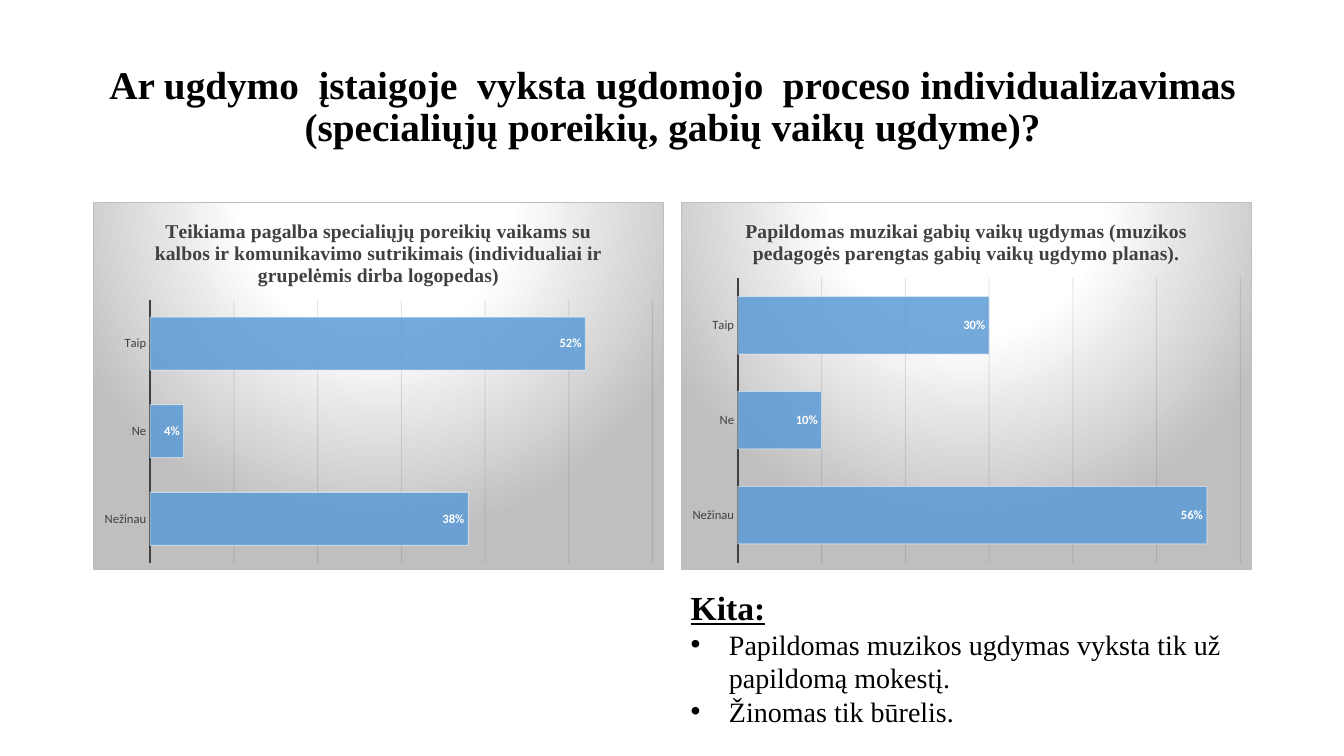
from dataclasses import dataclass

from lxml import etree
from pptx import Presentation
from pptx.chart.data import CategoryChartData
from pptx.dml.color import RGBColor
from pptx.enum.chart import XL_CHART_TYPE as ChartType
from pptx.enum.chart import XL_LABEL_POSITION as LabelPosition
from pptx.enum.chart import XL_TICK_MARK as TickMark
from pptx.enum.text import MSO_ANCHOR as Anchor
from pptx.enum.text import MSO_AUTO_SIZE as AutoSize
from pptx.enum.text import PP_ALIGN as Align
from pptx.oxml import parse_xml
from pptx.oxml.ns import nsdecls, qn
from pptx.util import Inches, Pt


@dataclass(frozen=True)
class Theme:
    text_font: str = "Times New Roman"
    chart_font: str = "Calibri"
    black: str = "000000"
    white: str = "FFFFFF"
    dark: str = "404040"
    grid: str = "0D0D0D"
    grey: str = "BFBFBF"
    bar: str = "5B9BD5"
    title_size: int = 28
    heading_size: int = 24
    list_size: int = 20
    chart_title_size: int = 14
    chart_size: int = 10
    label_size: int = 9


THEME = Theme()

# Two-column grid, in inches
SLIDE_WIDTH, SLIDE_HEIGHT = 13.33, 7.5
MARGIN, GAP = 0.92, 0.16
FULL_WIDTH = 11.5
COLUMN_WIDTH = (FULL_WIDTH - GAP) / 2
TITLE_ROW = (0.4, 1.34)
CHART_ROW = (2, 3.66)
LIST_ROW = (5.77, 1.82)

TITLE = ("Ar ugdymo  įstaigoje  vyksta ugdomojo  proceso individualizavimas "
         "(specialiųjų poreikių, gabių vaikų ugdyme)?")
ANSWERS = ("Nežinau", "Ne", "Taip")
CHARTS = (
    ("Teikiama pagalba specialiųjų poreikių vaikams su kalbos ir komunikavimo "
     "sutrikimais (individualiai ir grupelėmis dirba logopedas)", (0.38, 0.04, 0.52)),
    ("Papildomas muzikai gabių vaikų ugdymas (muzikos pedagogės parengtas "
     "gabių vaikų ugdymo planas).", (0.56, 0.1, 0.3)),
)
HEADING = "Kita:"
REMARKS = ("Papildomas muzikos ugdymas vyksta tik už papildomą mokestį.",
           "Žinomas tik būrelis.")


def cell(column, row, width=COLUMN_WIDTH):
    """Left, top, width and height of a grid cell."""
    left = MARGIN + column * (COLUMN_WIDTH + GAP)
    return [Inches(value) for value in (left, row[0], width, row[1])]


def place(shape, box):
    shape.left, shape.top, shape.width, shape.height = box


def style_font(font, name, size, color, bold=False):
    font.name, font.size, font.bold = name, Pt(size), bold
    font.color.rgb = RGBColor.from_string(color)


def style_line(line, color, width):
    line.color.rgb = RGBColor.from_string(color)
    line.width = Pt(width)


def set_alpha(chart, route, percent):
    for color in chart.element.xpath(route + "/a:solidFill/a:srgbClr"):
        etree.SubElement(color, qn("a:alpha")).set("val", str(percent * 1000))


def set_chart_background(chart):
    stops = "".join(
        f'<a:gs pos="{position * 1000}"><a:srgbClr val="{color}"/></a:gs>'
        for position, color in ((0, THEME.white), (39, THEME.white), (100, THEME.grey)))
    background = parse_xml(
        f'<c:spPr {nsdecls("c", "a")}><a:gradFill><a:gsLst>{stops}</a:gsLst>'
        '<a:path path="circle"><a:fillToRect l="50000" t="-80000" r="50000" b="180000"/>'
        f'</a:path></a:gradFill><a:ln w="{Pt(0.75)}"><a:solidFill>'
        f'<a:srgbClr val="{THEME.grey}"/></a:solidFill></a:ln></c:spPr>')
    chart.element.find(qn("c:chart")).addnext(background)


def style_axes(chart):
    category_axis = chart.category_axis
    category_axis.major_tick_mark = category_axis.minor_tick_mark = TickMark.NONE
    style_font(category_axis.tick_labels.font, THEME.chart_font, THEME.label_size, THEME.dark)
    style_line(category_axis.format.line, THEME.dark, 1.5)

    value_axis = chart.value_axis
    value_axis.visible = False
    value_axis.minimum_scale, value_axis.maximum_scale = 0, 0.6
    value_axis.major_unit = 0.1
    value_axis.has_major_gridlines = True
    style_line(value_axis.major_gridlines.format.line, THEME.grid, 0.75)
    set_alpha(chart, ".//c:majorGridlines/c:spPr/a:ln", 10)


def style_bars(chart):
    plot = chart.plots[0]
    plot.gap_width = 65
    plot.vary_by_categories = False
    series = plot.series[0]
    series.format.fill.solid()
    series.format.fill.fore_color.rgb = RGBColor.from_string(THEME.bar)
    style_line(series.format.line, THEME.white, 0.75)
    set_alpha(chart, ".//c:ser/c:spPr", 85)
    set_alpha(chart, ".//c:ser/c:spPr/a:ln", 50)

    labels = series.data_labels
    labels.show_value = True
    labels.position = LabelPosition.INSIDE_END
    labels.number_format, labels.number_format_is_linked = "0%", False
    style_font(labels.font, THEME.chart_font, THEME.label_size, THEME.white, bold=True)


def add_bar_chart(slide, box, title, values):
    data = CategoryChartData(number_format="0%")
    data.categories = ANSWERS
    data.add_series("Series 1", values)
    chart = slide.shapes.add_chart(ChartType.BAR_CLUSTERED, *box, data).chart
    style_font(chart.font, THEME.chart_font, THEME.chart_size, THEME.black)
    chart.has_legend = False
    chart.has_title = True
    paragraph = chart.chart_title.text_frame.paragraphs[0]
    paragraph.text = title
    style_font(paragraph.runs[0].font, THEME.text_font, THEME.chart_title_size,
               THEME.dark, bold=True)
    chart.chart_title.include_in_layout = False
    style_axes(chart)
    style_bars(chart)
    set_chart_background(chart)


def fill_title(shape, box):
    place(shape, box)
    text_frame = shape.text_frame
    text_frame.text = TITLE
    text_frame.vertical_anchor = Anchor.MIDDLE
    paragraph = text_frame.paragraphs[0]
    paragraph.alignment = Align.CENTER
    paragraph.line_spacing = 0.9
    style_font(paragraph.runs[0].font, THEME.text_font, THEME.title_size,
               THEME.black, bold=True)


def set_bullet(paragraph, character=None):
    properties = paragraph._p.get_or_add_pPr()
    indent = Inches(0.38) if character else 0
    properties.set("marL", str(indent))
    properties.set("indent", str(-indent))
    if character:
        etree.SubElement(properties, qn("a:buFont")).set("typeface", "Arial")
        etree.SubElement(properties, qn("a:buChar")).set("char", character)
    else:
        etree.SubElement(properties, qn("a:buNone"))


def fill_remarks(shape, box):
    place(shape, box)
    text_frame = shape.text_frame
    text_frame.text = "\n".join((HEADING, *REMARKS))
    text_frame.auto_size = AutoSize.SHAPE_TO_FIT_TEXT
    for index, paragraph in enumerate(text_frame.paragraphs):
        is_heading = index == 0
        paragraph.space_before = Pt(0)
        set_bullet(paragraph, None if is_heading else "•")
        font = paragraph.runs[0].font
        size = THEME.heading_size if is_heading else THEME.list_size
        style_font(font, THEME.text_font, size, THEME.black, bold=is_heading)
        font.underline = is_heading


def main():
    presentation = Presentation()
    presentation.slide_width = Inches(SLIDE_WIDTH)
    presentation.slide_height = Inches(SLIDE_HEIGHT)
    slide = presentation.slides.add_slide(presentation.slide_layouts[1])

    # Question, one chart per column, remarks below the right chart
    fill_title(slide.shapes.title, cell(0, TITLE_ROW, FULL_WIDTH))
    for column, (title, values) in enumerate(CHARTS):
        add_bar_chart(slide, cell(column, CHART_ROW), title, values)
    fill_remarks(slide.placeholders[1], cell(1, LIST_ROW))

    presentation.save("out.pptx")


if __name__ == "__main__":
    main()
